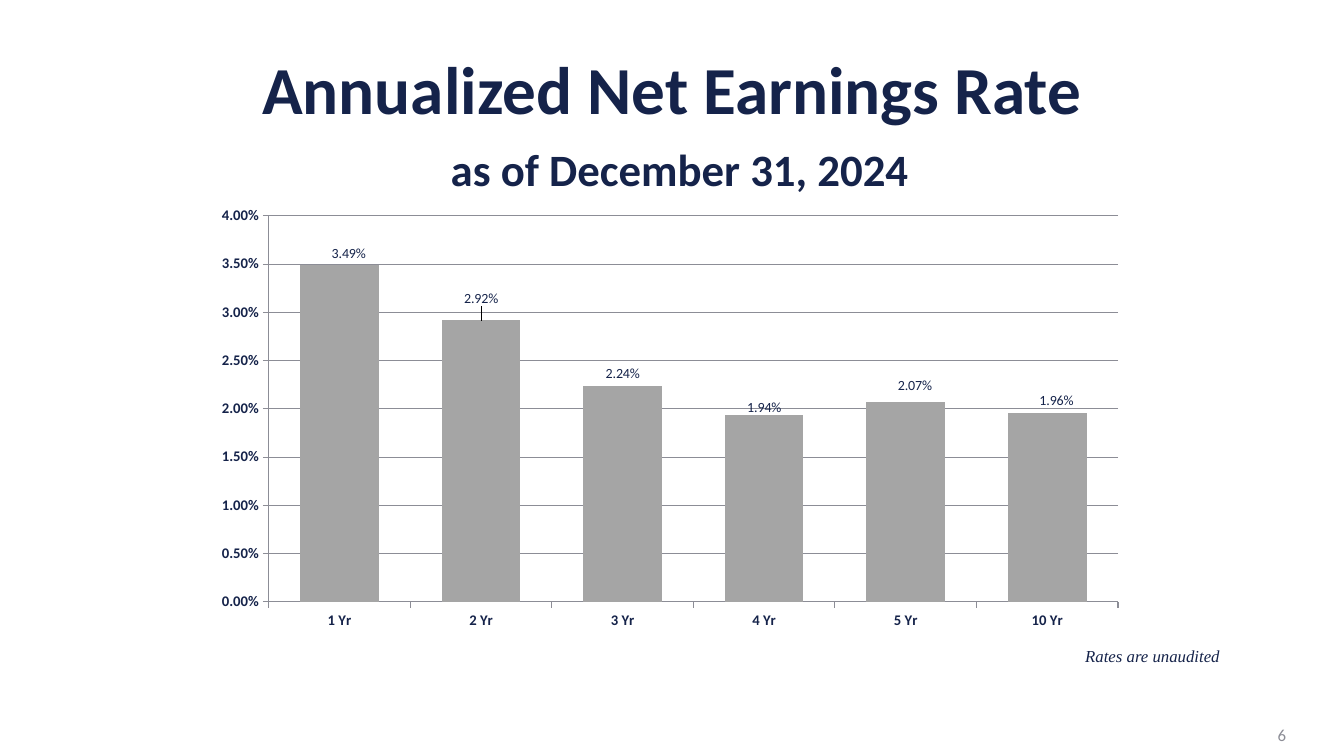
from lxml.etree import SubElement
from pptx import Presentation
from pptx.chart.data import CategoryChartData
from pptx.dml.color import RGBColor
from pptx.enum.chart import XL_CHART_TYPE, XL_LABEL_POSITION, XL_TICK_MARK
from pptx.enum.text import MSO_ANCHOR, PP_ALIGN
from pptx.oxml import parse_xml
from pptx.oxml.ns import nsdecls, qn
from pptx.util import Cm, Pt

NAVY, GRAY, LINE = "15234A", "A5A5A5", "8C8D96"


def style(font, size, color=NAVY, name="Calibri", bold=False, italic=False):
    font.size, font.name = Pt(size), name
    font.bold, font.italic = bold, italic
    font.color.rgb = RGBColor.from_string(color)


def layout(**values):
    node = parse_xml(f"<c:layout {nsdecls('c')}><c:manualLayout/></c:layout>")
    for key, value in values.items():
        SubElement(node[0], qn(f"c:{key}")).set("val", str(value))
    return node


prs = Presentation()
prs.slide_width, prs.slide_height = Cm(33.87), Cm(19.05)
slide = prs.slides.add_slide(prs.slide_layouts[5])

# Title
title = slide.shapes.title
title.left, title.top, title.width, title.height = Cm(1.7), Cm(2.11), Cm(30.48), Cm(2.26)
frame = title.text_frame
frame.word_wrap, frame.vertical_anchor = True, MSO_ANCHOR.MIDDLE
para = frame.paragraphs[0]
para.alignment, para.line_spacing = PP_ALIGN.CENTER, 0.9
head = para.add_run()
head.text = "Annualized Net Earnings Rate"
para.add_line_break()
gap = para.add_run()
gap.text = " "
date = para.add_run()
date.text = "as of December 31, 2024"
for run, size in ((head, 48), (gap, 48), (date, 32)):
    style(run.font, size, bold=True)

# Column chart
data = CategoryChartData(number_format="0.00%")
data.categories = ["1 Yr", "2 Yr", "3 Yr", "4 Yr", "5 Yr", "10 Yr"]
data.add_series("Series 1", [0.0349, 0.0292, 0.0224, 0.0194, 0.0207, 0.0196])
chart = slide.shapes.add_chart(
    XL_CHART_TYPE.COLUMN_CLUSTERED, Cm(5.28), Cm(5.08), Cm(22.99), Cm(11.68), data
).chart
chart.has_legend = chart.has_title = False
style(chart.font, 18)
area = chart.plots[0]
area.gap_width, area.vary_by_categories = 80, False
bars = area.series[0]
bars.format.fill.solid()
bars.format.fill.fore_color.rgb = RGBColor.from_string(GRAY)

# Plot area
box = chart._chartSpace.chart.plotArea
for old in box.findall(qn("c:layout")):
    box.remove(old)
box.insert(0, layout(layoutTarget="inner", xMode="edge", yMode="edge",
                     x=0.065, y=0.031, w=0.931, h=0.833))

# Axes
rates = chart.value_axis
rates.minimum_scale, rates.maximum_scale, rates.major_unit = 0, 0.04, 0.005
rates.has_major_gridlines = True
for axis, code in ((chart.category_axis, "@"), (rates, "0.00%")):
    axis.major_tick_mark = XL_TICK_MARK.OUTSIDE
    axis.tick_labels.number_format = code
    axis.tick_labels.number_format_is_linked = False
    style(axis.tick_labels.font, 10.5, bold=True)
for part in (chart.category_axis, rates, rates.major_gridlines):
    part.format.line.color.rgb = RGBColor.from_string(LINE)
    part.format.line.width = Pt(0.75)

# Value labels, some nudged by a share of the chart size
labels = bars.data_labels
labels.show_value = True
labels.number_format, labels.number_format_is_linked = "0.00%", False
labels.position = XL_LABEL_POSITION.OUTSIDE_END
style(labels.font, 10)
shifts = {0: (0.01, 0), 1: (0, -0.02), 3: (0, 0.01), 4: (0.01, -0.01), 5: (0.01, 0)}
for spot, (x, y) in shifts.items():
    label = bars.points[spot].data_label
    style(label.font, 10)
    label.position = XL_LABEL_POSITION.OUTSIDE_END
    label._dLbl.insert(1, layout(x=x, y=y))

# Page number and footnote
notes = [
    ("6", 25.04, 18.01, 7.62, 1.02, PP_ALIGN.RIGHT, MSO_ANCHOR.MIDDLE,
     dict(color=LINE)),
    ("Rates are unaudited", 27.1, 16.15, 5.92, 0.76, PP_ALIGN.LEFT, MSO_ANCHOR.TOP,
     dict(name="Times New Roman", italic=True)),
]
for text, x, y, w, h, align, anchor, look in notes:
    frame = slide.shapes.add_textbox(Cm(x), Cm(y), Cm(w), Cm(h)).text_frame
    frame.word_wrap, frame.vertical_anchor = True, anchor
    para = frame.paragraphs[0]
    para.text, para.alignment = text, align
    style(para.font, 12, **look)

prs.save("out.pptx")
